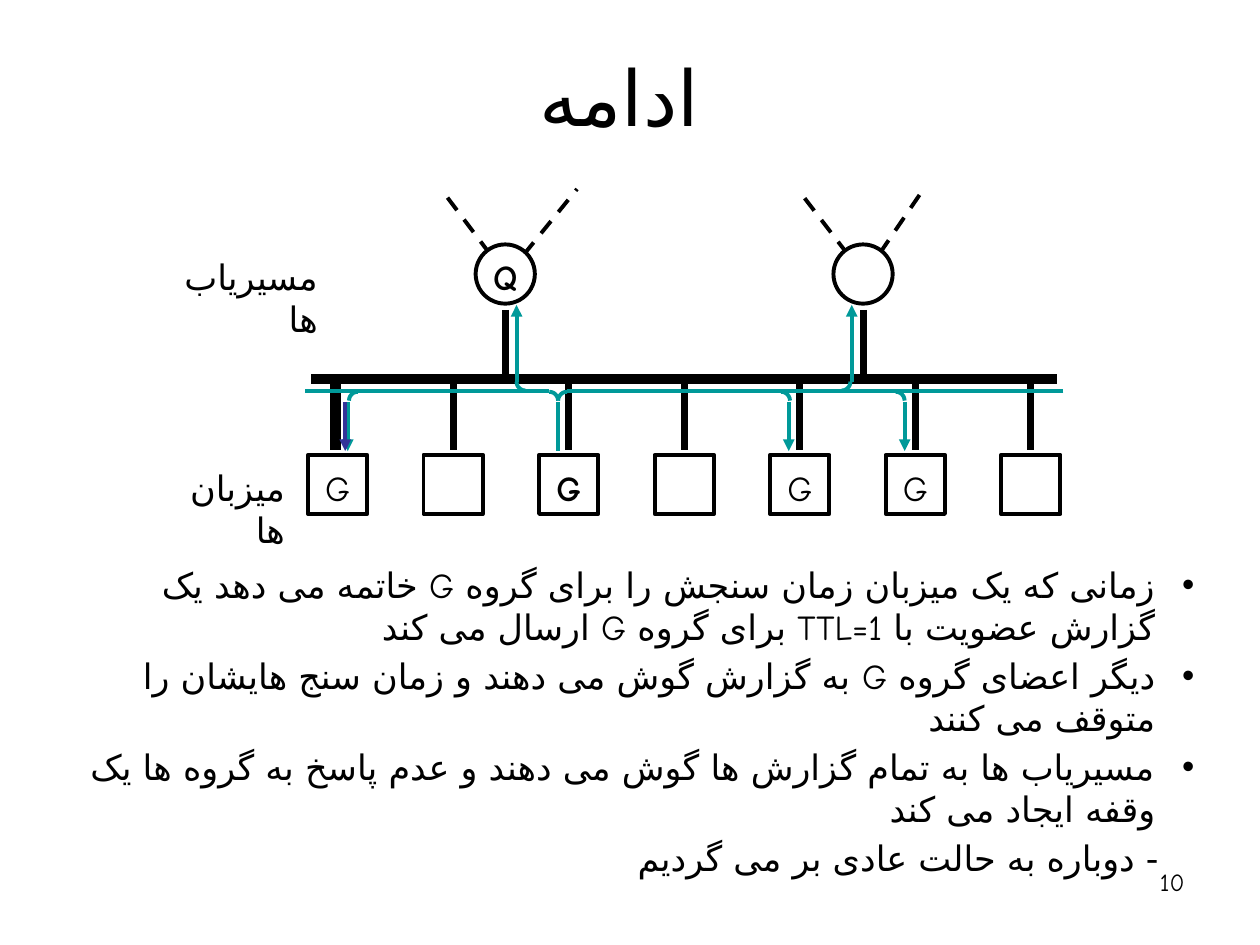
"""Build the slide on group membership reports between routers and hosts."""
import math

from lxml import etree
from pptx import Presentation
from pptx import util as u
from pptx.dml.color import RGBColor
from pptx.enum import dml, shapes, text
from pptx.oxml.ns import qn

FONT, PERSIAN_FONT = "Comic Neue", "DejaVu Sans"
BLACK, WHITE, TEAL, INDIGO = "000000", "FFFFFF", "009999", "333399"
TITLE = "ادامه"
BULLETS = [
    "زمانی که یک میزبان زمان سنجش را برای گروه G خاتمه می دهد یک گزارش عضویت با TTL=1 برای گروه G ارسال می کند",
    "دیگر اعضای گروه G به گزارش گوش می دهند و زمان سنج هایشان را متوقف می کنند",
    "مسیریاب ها به تمام گزارش ها گوش می دهند و عدم پاسخ به گروه ها یک وقفه ایجاد می کند",
]
CLOSING = "- دوباره به حالت عادی بر می گردیم"
LABELS = [("مسیریاب ها", 1.35, 1.98, 1.27), ("میزبان ها", 1.3, 3.65, 1.06)]
ROUTERS = [(4.01, "Q", (3.5, 4.58)), (6.85, "", (6.33, 7.33))]
HOSTS = [("G", False), ("", False), ("G", True), ("", False),
         ("G", False), ("G", False), ("", False)]
HOST_X, HOST_STEP, HOST_Y = 2.68, 0.917, 3.61
NODE, RADIUS, THIN = 0.47, 0.07, 2.25
REPORT_LINES = [(4.36, 2.42), (8.44, 4.5)]
TO_ROUTERS, TO_HOSTS, SENDER = (4.1, 6.76), (2.76, 6.26, 7.18), 4.43
BENDS = [(4.17, 3.03, 90), (6.68, 3.03, 0), (2.84, 3.18, 180), (4.5, 3.18, 180),
         (4.36, 3.18, 270), (6.2, 3.18, 270), (7.11, 3.18, 270)]


def rgb(value):
    return RGBColor.from_string(value)


def stroke(s, color, width):
    s.line.color.rgb = rgb(color)
    s.line.width = u.Pt(width)


def line(s, x1, y1, x2, y2, color=BLACK, width=THIN, dash=False, arrow=False):
    sp = s.shapes.add_connector(shapes.MSO_CONNECTOR.STRAIGHT,
                                *map(u.Inches, (x1, y1, x2, y2)))
    stroke(sp, color, width)
    if dash:
        sp.line.dash_style = dml.MSO_LINE.DASH
    if arrow:
        etree.SubElement(sp.line._get_or_add_ln(), qn("a:tailEnd"), type="triangle")
    etree.SubElement(sp._element.spPr, qn("a:effectLst"))


def bend(s, cx, cy, start):
    angles = [math.radians(start + step * 15) for step in range(7)]
    points = [(u.Inches(cx + RADIUS * math.cos(a)), u.Inches(cy + RADIUS * math.sin(a)))
              for a in angles]
    builder = s.shapes.build_freeform(*points[0])
    builder.add_line_segments(points[1:], close=False)
    sp = builder.convert_to_shape()
    sp.shadow.inherit = False
    sp.fill.background()
    stroke(sp, TEAL, THIN)


def write(p, words, size, align, bold=False, rtl=False):
    p.alignment = align
    if rtl:
        p._p.get_or_add_pPr().set("rtl", "1")
    r = p.add_run()
    r.text = words
    r.font.size, r.font.name, r.font.bold = u.Pt(size), FONT, bold
    r.font.color.rgb = rgb(BLACK)
    if rtl:
        etree.SubElement(r._r.get_or_add_rPr(), qn("a:cs"), typeface=PERSIAN_FONT)


def text_box(s, words, x, y, w, h, size, align, wrap=True, **style):
    tf = s.shapes.add_textbox(*map(u.Inches, (x, y, w, h))).text_frame
    tf.word_wrap = wrap
    write(tf.paragraphs[0], words, size, align, **style)


def node(s, kind, cx, y, words, bold):
    sp = s.shapes.add_shape(kind, *map(u.Inches, (cx - NODE / 2, y, NODE, NODE)))
    sp.shadow.inherit = False
    sp.fill.solid()
    sp.fill.fore_color.rgb = rgb(WHITE)
    stroke(sp, BLACK, THIN)
    if words:
        text_box(s, words, cx - 0.2, y + 0.04, 0.4, 0.43, 20,
                 text.PP_ALIGN.CENTER, wrap=False, bold=bold)


def place(sp, x, y, w, h):
    sp.left, sp.top, sp.width, sp.height = map(u.Inches, (x, y, w, h))
    sp.text_frame.auto_size = text.MSO_AUTO_SIZE.NONE
    return sp.text_frame


def add_text(s):
    tf = place(s.shapes.title, 0.77, 0.3, 8.29, 0.92)
    tf.vertical_anchor = text.MSO_ANCHOR.MIDDLE
    write(tf.paragraphs[0], TITLE, 44, text.PP_ALIGN.CENTER, rtl=True)
    tf = place(s.placeholders[1], 0.58, 4.42, 9, 2.75)
    for i, words in enumerate(BULLETS + [CLOSING]):
        p = tf.add_paragraph() if i else tf.paragraphs[0]
        p.space_before = u.Pt(4)
        write(p, words, 20, text.PP_ALIGN.RIGHT, rtl=True)
        bulleted = words != CLOSING
        pPr = p._p.get_or_add_pPr()
        pPr.set("marL", str(u.Inches(0.31 if bulleted else 0.28)))
        pPr.set("indent", str(u.Inches(-0.31 if bulleted else 0)))
        if bulleted:
            etree.SubElement(pPr, qn("a:buChar"), char="•")
        else:
            etree.SubElement(pPr, qn("a:buNone"))
    for words, x, y, w in LABELS:
        text_box(s, words, x, y, w, 0.43, 20, text.PP_ALIGN.RIGHT, rtl=True)
    text_box(s, "10", 7.17, 6.83, 2.33, 0.52, 14, text.PP_ALIGN.RIGHT)


def add_network(s):
    host_xs = [HOST_X + i * HOST_STEP for i in range(len(HOSTS))]
    line(s, 2.47, 3.01, 8.39, 3.01, width=6)
    for x, words, branches in ROUTERS:
        for end in branches:
            line(s, x + 0.01, 2.19, end, 1.5, dash=True)
        line(s, x, 2.46, x, 2.99, width=4)
        node(s, shapes.MSO_SHAPE.OVAL, x, 1.94, words, True)
    for x in [HOST_X - 0.03] + host_xs:
        line(s, x, 3.04, x, 3.57, width=4)
    for x, (words, bold) in zip(host_xs, HOSTS):
        node(s, shapes.MSO_SHAPE.RECTANGLE, x, HOST_Y, words, bold)


def add_reports(s):
    for x1, x2 in REPORT_LINES:
        line(s, x1, 3.1, x2, 3.1, TEAL)
    for cx, cy, start in BENDS:
        bend(s, cx, cy, start)
    for x in TO_ROUTERS:
        line(s, x, 3.03, x, 2.42, TEAL, arrow=True)
    for x in TO_HOSTS:
        line(s, x, 3.19, x, 3.58, TEAL, arrow=True)
    line(s, SENDER, 3.19, SENDER, 3.58, TEAL)
    line(s, 2.74, 3.19, 2.74, 3.58, INDIGO, arrow=True)


def main():
    prs = Presentation()
    prs.slide_width, prs.slide_height = u.Inches(10), u.Inches(7.5)
    s = prs.slides.add_slide(prs.slide_layouts[1])
    add_text(s)
    add_network(s)
    add_reports(s)
    prs.save("out.pptx")


if __name__ == "__main__":
    main()
